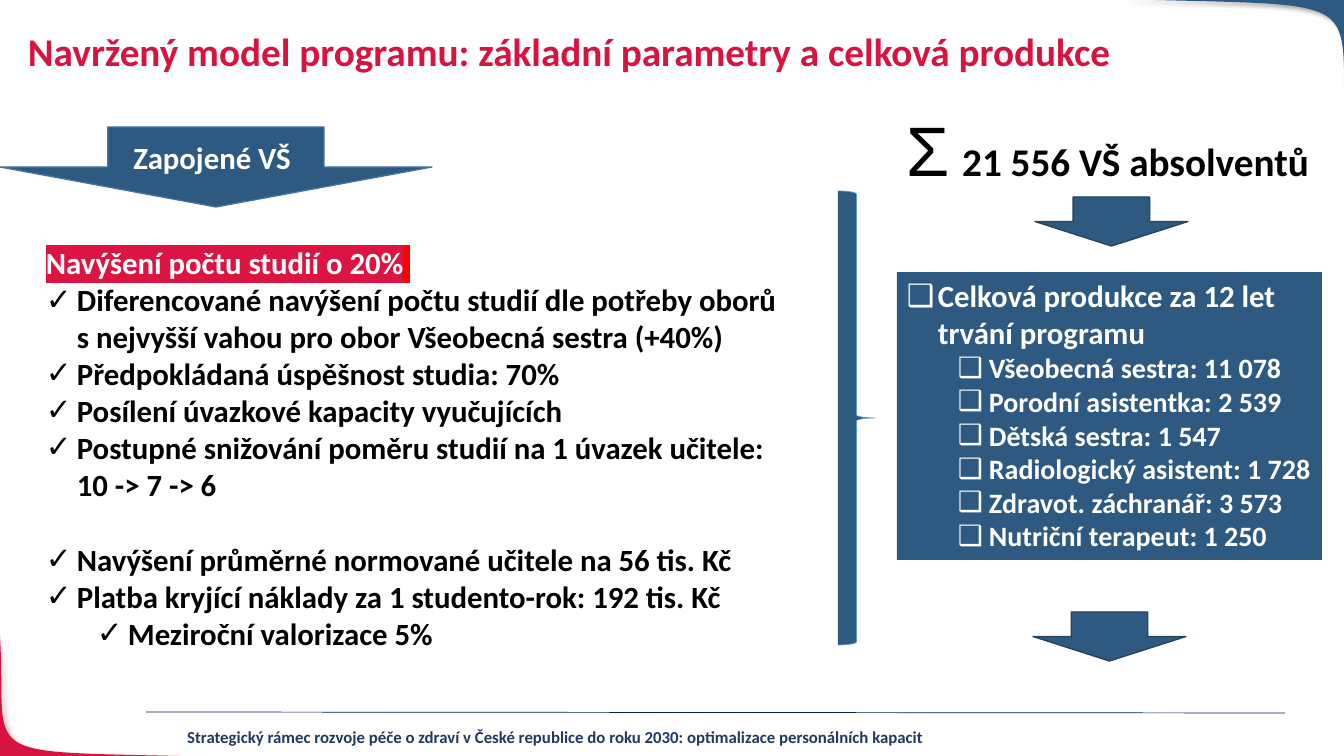
from lxml.etree import SubElement as Sub
from pptx import Presentation
from pptx.dml.color import RGBColor as RGB
from pptx.enum.shapes import MSO_CONNECTOR as LINK, MSO_SHAPE as SHAPE
from pptx.enum.text import MSO_ANCHOR as ANCHOR, PP_ALIGN as ALIGN
from pptx.oxml.ns import qn
from pptx.util import Pt

PX = 914400 / 100.8
HUE = {
    "red": "D71440", "mark": "DB1441", "hot": "FF0000", "blue": "2E5980",
    "edge": "43739E", "dark": "28445D", "sky": "5B9BD5", "navy": "002060",
    "foot": "203864", "white": "FFFFFF", "black": "000000",
}

deck = Presentation()
deck.slide_width, deck.slide_height = round(1344 * PX), round(756 * PX)
slide = deck.slides.add_slide(deck.slide_layouts[6])
shapes = slide.shapes


def place(kind, area, line=None, width=1):
    x, y, w, h = [round(v * PX) for v in area]
    if kind is None:
        item = shapes.add_textbox(x, y, w, h)
    else:
        item = shapes.add_shape(kind, x, y, w, h)
        item.shadow.inherit = False
        item.fill.solid()
        item.fill.fore_color.rgb = RGB.from_string(HUE["blue"])
        if line:
            item.line.color.rgb = RGB.from_string(HUE[line])
            item.line.width = Pt(width)
        else:
            item.line.fill.background()
    item.text_frame.word_wrap = True
    item.text_frame.vertical_anchor = ANCHOR.TOP
    return item.text_frame


def write(para, text, size, hue, bold=True, face="Calibri", mark=None):
    run = para.add_run()
    run.text = text
    font = run.font
    font.name, font.size, font.bold = face, Pt(size), bold
    font.color.rgb = RGB.from_string(HUE[hue])
    if mark:
        props = run._r.get_or_add_rPr()
        light = Sub(props, qn("a:highlight"))
        Sub(light, qn("a:srgbClr"), val=HUE[mark])
        props.find(qn("a:solidFill")).addnext(light)


corners = [
    ("red", [(215, 757), (-34, 750), (8, 765), (0, 635)], (0, 757)),
    ("blue", [(1120, -1), (1381, 7), (1337, -10), (1346, 143)], (1346, -1)),
]
for hue, curve, tip in corners:
    dots = []
    for step in range(41):
        t = step / 40
        parts = [(1 - t) ** 3, 3 * t * (1 - t) ** 2, 3 * t * t * (1 - t), t ** 3]
        dots.append([sum(k * c[axis] for k, c in zip(parts, curve)) * PX
                     for axis in (0, 1)])
    dots.append([v * PX for v in tip])
    path = shapes.build_freeform(round(dots[0][0]), round(dots[0][1]))
    path.add_line_segments([(round(x), round(y)) for x, y in dots[1:]], close=True)
    corner = path.convert_to_shape()
    corner.fill.solid()
    corner.fill.fore_color.rgb = RGB.from_string(HUE[hue])
    corner.line.fill.background()
    corner.shadow.inherit = False
    glow = Sub(corner._element.spPr.find(qn("a:effectLst")), qn("a:outerShdw"),
               blurRad=str(Pt(4)), dist=str(Pt(3)), dir="2700000",
               algn="tl", rotWithShape="0")
    Sub(Sub(glow, qn("a:srgbClr"), val=HUE["black"]), qn("a:alpha"), val="40000")

rule = shapes.add_connector(LINK.STRAIGHT, *[round(v * PX) for v in (146, 712, 1285, 713)])
rule.line.color.rgb = RGB.from_string(HUE["navy"])
rule.line.width = Pt(0.5)
Sub(rule._element.spPr, qn("a:effectLst"))

foot = place(None, (102, 722, 907, 30)).paragraphs[0]
foot.alignment = ALIGN.CENTER
write(foot, "Strategický rámec rozvoje péče o zdraví v České republice do roku 2030: "
      "optimalizace personálních kapacit", 12, "foot")

place(SHAPE.DOWN_ARROW, (0, 127, 432, 80), "edge")
label = place(None, (98, 134, 235, 47)).paragraphs[0]
label.alignment = ALIGN.CENTER
write(label, "Zapojené VŠ ", 22, "white")

goals = [
    (0, "", 0, [("Navýšení počtu studií o 20%", "white", "mark"), (" ", "white", "hot")]),
    (0, "✓", 0, [("Diferencované navýšení počtu studií dle potřeby oborů "
                  "s nejvyšší vahou pro obor Všeobecná sestra (+40%)", "black", None)]),
    (0, "✓", 0, [("Předpokládaná úspěšnost studia: 70%", "black", None)]),
    (0, "✓", 0, [("Posílení úvazkové kapacity vyučujících", "black", None)]),
    (0, "✓", 0, [("Postupné snižování poměru studií na 1 úvazek učitele: "
                  "10 -> 7 -> 6", "black", None)]),
    (0, "✓", 27, [("Navýšení průměrné normované učitele na 56 tis. Kč", "black", None)]),
    (0, "✓", 0, [("Platba kryjící náklady za 1 studento-rok: 192 tis. Kč", "black", None)]),
    (1, "✓", 0, [("Meziroční valorizace 5%", "black", None)]),
]
fields = [
    ("Všeobecná sestra", "11 078"), ("Porodní asistentka", "2 539"),
    ("Dětská sestra", "1 547"), ("Radiologický asistent", "1 728"),
    ("Zdravot. záchranář", "3 573"), ("Nutriční terapeut", "1 250"),
]
totals = [(0, "❑", 0, [("Celková produkce za 12 let trvání programu", "white", None)])]
totals += [(1, "❑", 0, [(f"{name}: {count}", "white", None)]) for name, count in fields]

lists = [
    (place(None, (36, 239, 760, 420)), goals, 22),
    (place(SHAPE.RECTANGLE, (897, 272, 425, 288)), totals, 20),
]
for frame, rows, small in lists:
    for i, (level, sign, gap, runs) in enumerate(rows):
        para = frame.add_paragraph() if i else frame.paragraphs[0]
        para.alignment = ALIGN.LEFT
        para.level = level
        if gap:
            para.space_before = Pt(gap)
        props = para._p.get_or_add_pPr()
        props.set("marL", str(round((31 + 51 * level) * PX)))
        props.set("indent", str(round(-31 * PX)))
        if sign:
            Sub(props, qn("a:buFont"), typeface="Arial")
            Sub(props, qn("a:buChar"), char=sign)
        else:
            Sub(props, qn("a:buNone"))
        for text, hue, mark in runs:
            write(para, text, small if level else 22, hue, mark=mark)

place(SHAPE.RIGHT_BRACE, (838, 191, 37, 454), "sky", 0.5)

title = place(None, (18, 28, 1269, 59)).paragraphs[0]
title.line_spacing = 0.9
write(title, "Navržený model programu: základní parametry a celková produkce", 28, "red")

total = place(None, (890, 102, 444, 95)).paragraphs[0]
total.alignment = ALIGN.CENTER
write(total, "Σ", 50, "black", False, "Arial")
write(total, " ", 40, "black", False)
write(total, "21 556 VŠ absolventů ", 28, "black")

for x, y in [(1035, 197), (1033, 612)]:
    place(SHAPE.DOWN_ARROW, (x, y, 153, 49), "dark")

deck.save("out.pptx")
